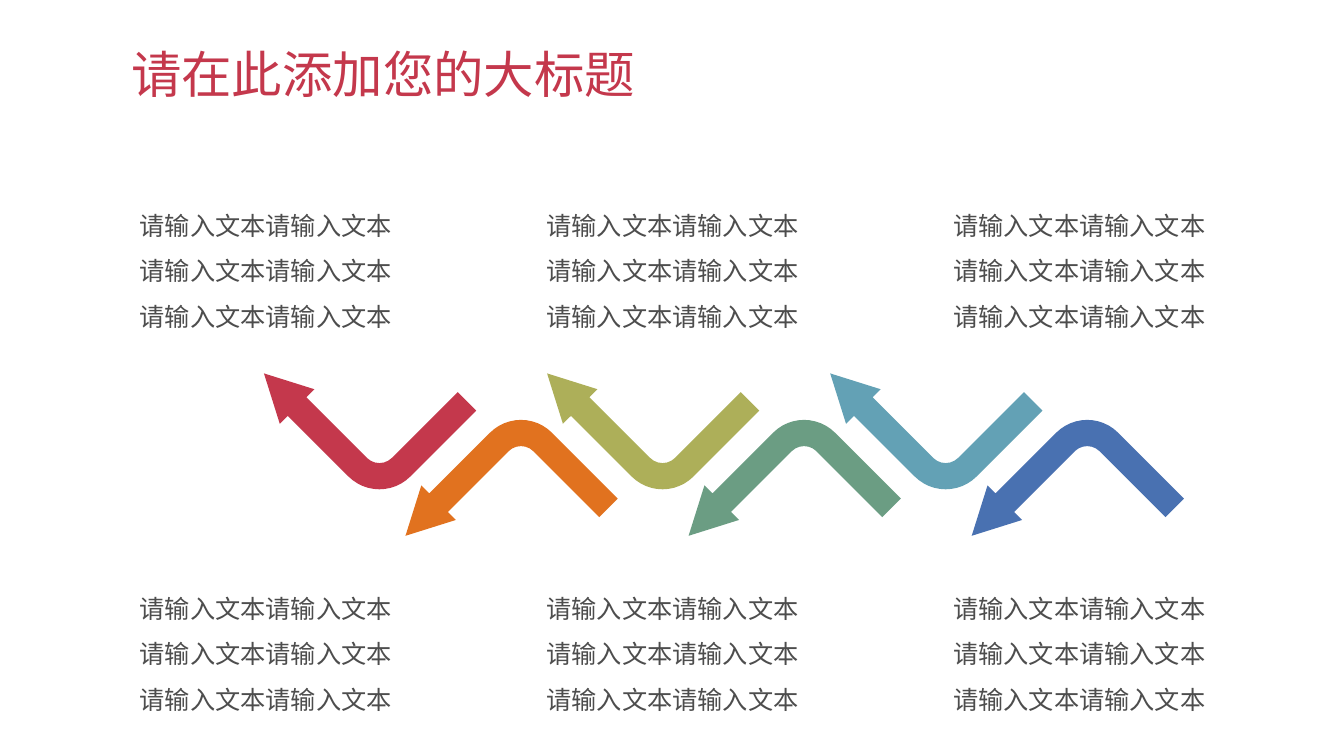
import pptx
import pptx.util
import pptx.dml.color
import pptx.enum.shapes
import pptx.enum.text
import pptx.oxml.ns
from lxml import etree

Inches = pptx.util.Inches
ALIGN = pptx.enum.text.PP_ALIGN
FONT = "Noto Sans CJK SC"
HUES = ["C4384C", "E1721F", "ADAF59", "6B9D83", "63A1B5", "4971B1"]
BENDS = (0.177, 0.165, 0.316, 0.295)


def color(code):
    return pptx.dml.color.RGBColor.from_string(code)


def write(shape, text, size, hue, align, gap):
    """Fill a shape with one paragraph, centred vertically."""
    frame = shape.text_frame
    frame.word_wrap = True
    frame.vertical_anchor = pptx.enum.text.MSO_ANCHOR.MIDDLE
    para = frame.paragraphs[0]
    para.text = text
    para.alignment = align
    para.line_spacing = gap
    font = para.font
    font.size = pptx.util.Pt(size)
    font.color.rgb = color(hue)
    font.name = FONT
    # Chinese glyphs take the East Asian typeface
    east = etree.SubElement(font._element, pptx.oxml.ns.qn("a:ea"))
    east.set("typeface", FONT)


def add_title(slide, text):
    title = slide.shapes.title
    title.left, title.top = Inches(1.2), Inches(0.3)
    title.width, title.height = Inches(10.94), Inches(0.93)
    write(title, text, 36, HUES[0], ALIGN.LEFT, 0.9)


def add_arrow(slide, left, top, hue, up):
    """Add a bent arrow whose head points up-left or down-left."""
    arrow = slide.shapes.add_shape(
        pptx.enum.shapes.MSO_SHAPE.BENT_ARROW,
        Inches(left), Inches(top), Inches(1.75), Inches(1.47))
    for i, bend in enumerate(BENDS):
        arrow.adjustments[i] = bend
    arrow.rotation = 45 if up else 315
    frame = arrow._element.spPr.xfrm
    frame.set("flipH", "1")
    if up:
        frame.set("flipV", "1")
    arrow.shadow.inherit = False
    arrow.fill.solid()
    arrow.fill.fore_color.rgb = color(hue)
    arrow.line.fill.background()


def add_note(slide, left, top):
    box = slide.shapes.add_textbox(
        Inches(left), Inches(top), Inches(2.93), Inches(1.7))
    write(box, "请输入文本" * 6, 18, "4D4D4D", ALIGN.CENTER, 1.5)


def main():
    deck = pptx.Presentation()
    deck.slide_width, deck.slide_height = Inches(13.33), Inches(7.5)
    slide = deck.slides.add_slide(deck.slide_layouts[5])
    add_title(slide, "请在此添加您的大标题")
    for i, hue in enumerate(HUES):
        up = i % 2 == 0
        add_arrow(slide, 2.71 + 1.404 * i, 3.24 if up else 4.31, hue, up)
    for top in (1.76, 5.56):
        for col in range(3):
            add_note(slide, 1.17 + 4.035 * col, top)
    deck.save("out.pptx")


if __name__ == "__main__":
    main()
